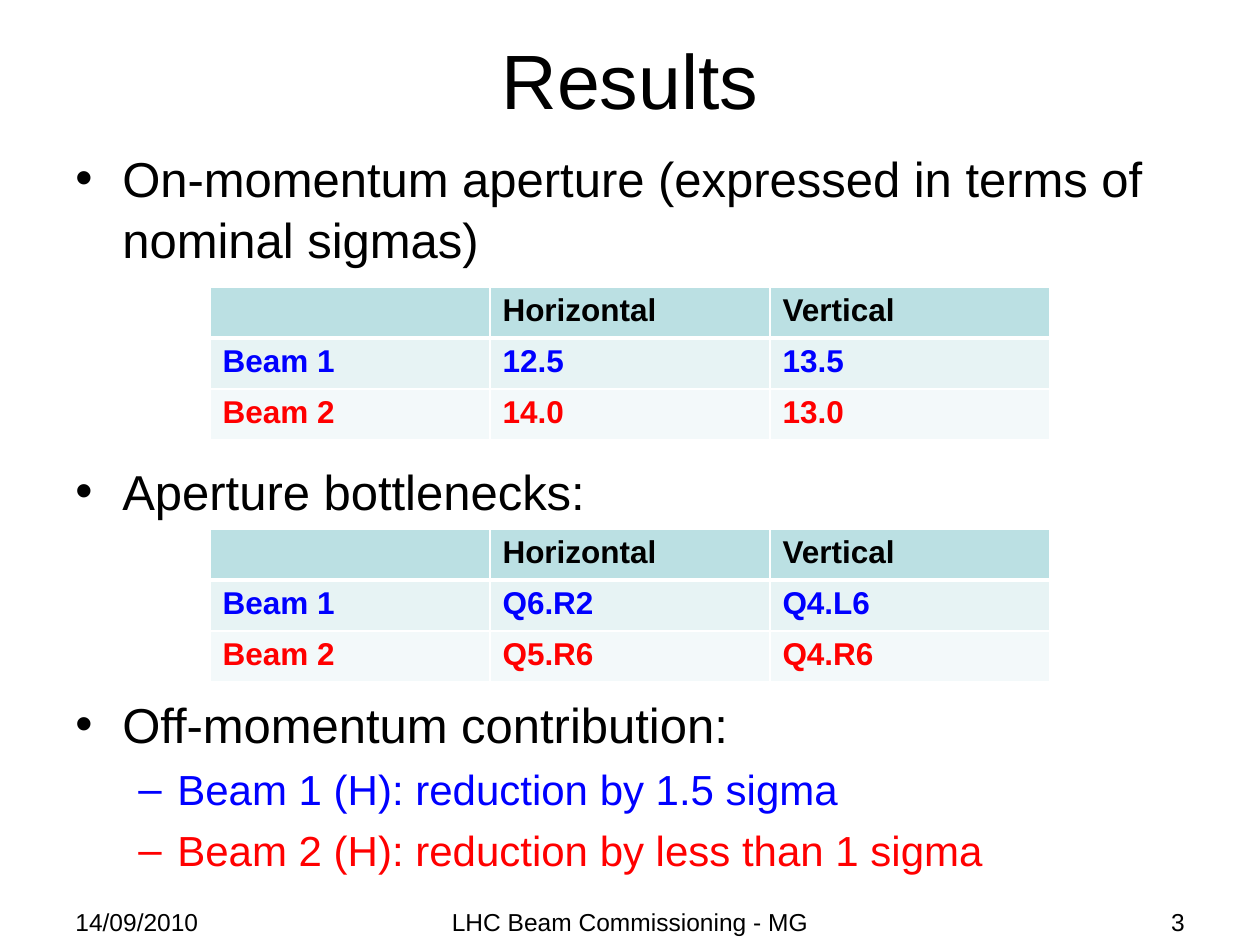
from pptx import Presentation
from pptx.dml.color import RGBColor as RGB
from pptx.enum.text import MSO_ANCHOR as Anchor, PP_ALIGN as Align
from pptx.oxml.ns import qn
from pptx.util import Pt
from lxml.etree import SubElement as Sub

PX = 914400 / 126
BLACK, BLUE, RED, WHITE = "000000", "0000FF", "FF0000", "FFFFFF"


def add_run(para, text, size, color=BLACK, bold=False):
    run = para.add_run()
    run.text = text
    font = run.font
    font.name, font.size, font.bold = "Arial", Pt(size), bold
    font.color.rgb = RGB.from_string(color)


def add_box(*rect):
    box = slide.shapes.add_textbox(*[round(n * PX) for n in rect])
    frame = box.text_frame
    frame.word_wrap = True
    return frame


deck = Presentation()
deck.slide_width, deck.slide_height = round(1260 * PX), round(945 * PX)
slide = deck.slides.add_slide(deck.slide_layouts[6])

# Title
frame = add_box(63, 0, 1134, 158)
frame.vertical_anchor = Anchor.MIDDLE
para = frame.paragraphs[0]
para.alignment = Align.CENTER
add_run(para, "Results", 44)

# Bullets, with room left for the tables: text, level, color, space before
points = [
    ("On-momentum aperture (expressed in terms of nominal sigmas)", 0, BLACK, 0),
    ("Aperture bottlenecks:", 0, BLACK, 109),
    ("Off-momentum contribution:", 0, BLACK, 98),
    ("Beam 1 (H): reduction by 1.5 sigma", 1, BLUE, 5),
    ("Beam 2 (H): reduction by less than 1 sigma", 1, RED, 5),
]
levels = [(28, "•", 47, -47), (24, "–", 102, -39)]  # size, mark, margin, indent
frame = add_box(63, 136, 1134, 766)
frame.margin_top = round(10 * PX)
for i, (text, level, color, gap) in enumerate(points):
    size, mark, left, hang = levels[level]
    para = frame.add_paragraph() if i else frame.paragraphs[0]
    para.level = level
    para.line_spacing, para.space_before = 1.04, Pt(gap)
    props = para._p.get_or_add_pPr()
    props.set("marL", str(round(left * PX)))
    props.set("indent", str(round(hang * PX)))
    Sub(props, qn("a:buFont"), typeface="Arial")
    Sub(props, qn("a:buChar"), char=mark)
    add_run(para, text, size, color)

# Tables
head = ["", "Horizontal", "Vertical"]
tables = [
    (287, [head, ["Beam 1", "12.5", "13.5"], ["Beam 2", "14.0", "13.0"]]),
    (529, [head, ["Beam 1", "Q6.R2", "Q4.L6"], ["Beam 2", "Q5.R6", "Q4.R6"]]),
]
looks = [("BBE0E3", BLACK), ("E7F3F4", BLUE), ("F3F9FA", RED)]  # fill, text
for top, rows in tables:
    rect = [round(n * PX) for n in (210, top, 840, 153)]
    table = slide.shapes.add_table(3, 3, *rect).table
    table.horz_banding = False
    for r, row in enumerate(rows):
        fill, color = looks[r]
        for c, text in enumerate(row):
            cell = table.cell(r, c)
            # White borders, thick below the header
            props = cell._tc.get_or_add_tcPr()
            for side in "LRTB":
                thick = (r, side) in [(0, "B"), (1, "T")]
                line = Sub(props, qn("a:ln" + side), w=str(Pt(3 if thick else 1)))
                Sub(Sub(line, qn("a:solidFill")), qn("a:srgbClr"), val=WHITE)
            cell.fill.solid()
            cell.fill.fore_color.rgb = RGB.from_string(fill)
            if text:
                add_run(cell.text_frame.paragraphs[0], text, 18, color, True)

# Footer
for text, left, width, align in [
    ("14/09/2010", 63, 294, Align.LEFT),
    ("LHC Beam Commissioning - MG", 430, 400, Align.CENTER),
    ("3", 903, 294, Align.RIGHT),
]:
    para = add_box(left, 901, width, 66).paragraphs[0]
    para.alignment = align
    add_run(para, text, 14)

deck.save("out.pptx")
